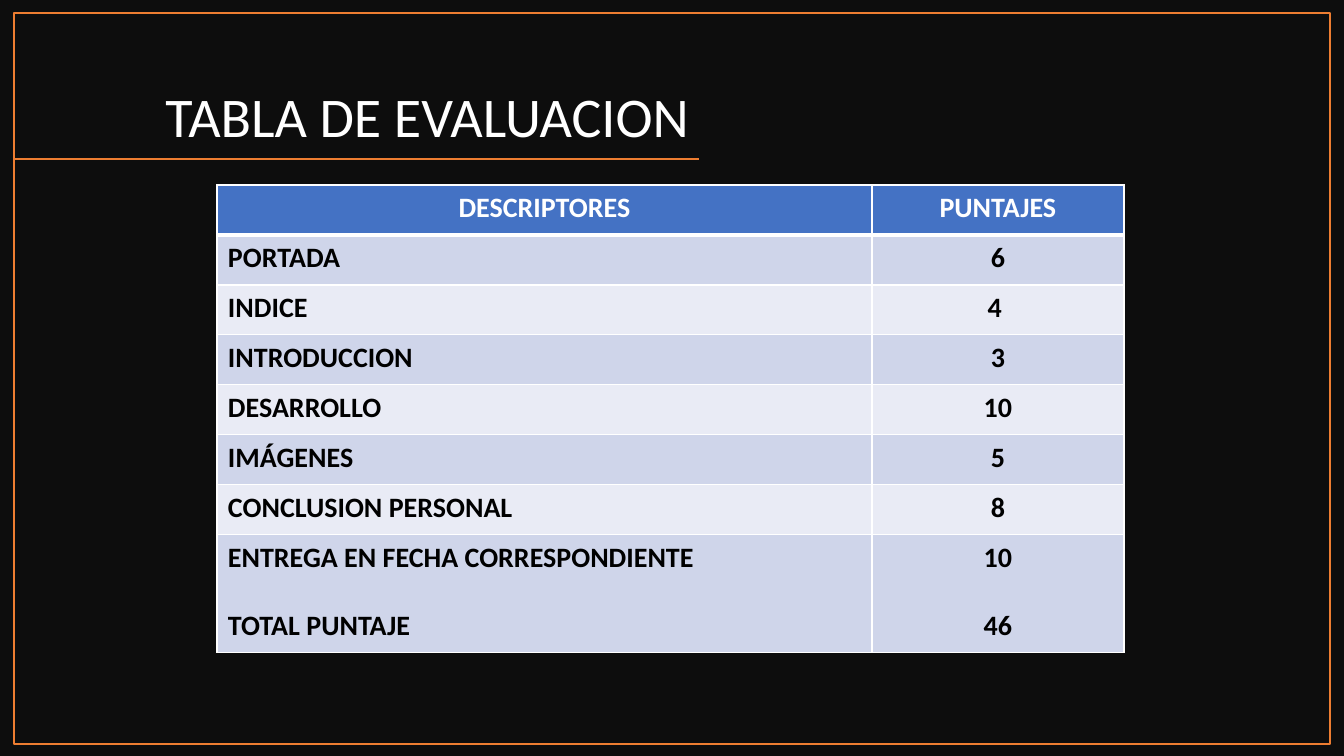
"""Build the evaluation table slide."""
from lxml import etree
from pptx import Presentation
from pptx import util as u
from pptx.dml.color import RGBColor
from pptx.enum import shapes, text
from pptx.oxml.ns import qn

TITLE = "TABLA DE EVALUACION"
HEADINGS = ("DESCRIPTORES", "PUNTAJES")
SCORES = [
    (["PORTADA"], ["6"]),
    (["INDICE"], ["4 "]),
    (["INTRODUCCION"], ["3"]),
    (["DESARROLLO"], ["10"]),
    (["IMÁGENES"], ["5"]),
    (["CONCLUSION PERSONAL"], ["8"]),
    (["ENTREGA EN FECHA CORRESPONDIENTE", "TOTAL PUNTAJE"], ["10", "46"]),
]
FONT = "Calibri"
NIGHT, ORANGE, WHITE, BLACK = "0D0D0D", "ED7D31", "FFFFFF", "000000"
HEADING_BLUE, BANDS = "4472C4", ("CFD5EA", "E9EBF5")
SLIDE = (1344, 756)
TITLE_BOX = (93, 42, 606, 113)
FRAME = (14, 13, 1316, 731)
RULE_Y = 159
TABLE_AT = (217, 185)
COLUMNS = (655, 252)
ROW, LAST_ROW = 50, 118
CELL_INSETS = (11, 6)


def px(length):
    return u.Emu(round(length * 914400 / 100.8))


def color(value):
    return RGBColor.from_string(value)


def write(frame, lines, size, ink, bold=False, align=text.PP_ALIGN.LEFT, gap=0, spacing=1.0):
    for number, line in enumerate(lines):
        paragraph = frame.add_paragraph() if number else frame.paragraphs[0]
        paragraph.alignment = align
        paragraph.line_spacing = spacing
        if number:
            paragraph.space_before = u.Pt(gap)
        run = paragraph.add_run()
        run.text = line
        run.font.name, run.font.size, run.font.bold = FONT, u.Pt(size), bold
        run.font.color.rgb = color(ink)


def outline(line):
    line.color.rgb = color(ORANGE)
    line.width = u.Pt(1)


def border(cell, side, width):
    edge = etree.SubElement(cell._tc.get_or_add_tcPr(), qn(f"a:ln{side}"), w=str(u.Pt(width)))
    fill = etree.SubElement(edge, qn("a:solidFill"))
    etree.SubElement(fill, qn("a:srgbClr"), val=WHITE)


def add_scores(slide):
    rows = [tuple([heading] for heading in HEADINGS)] + SCORES
    heights = [ROW] * len(SCORES) + [LAST_ROW]
    table = slide.shapes.add_table(len(rows), len(COLUMNS), *map(px, TABLE_AT),
                                   px(sum(COLUMNS)), px(sum(heights))).table
    for column, width in zip(table.columns, COLUMNS):
        column.width = px(width)
    for r, (row, height) in enumerate(zip(rows, heights)):
        table.rows[r].height = px(height)
        heading = r == 0
        for c, lines in enumerate(row):
            cell = table.cell(r, c)
            cell.margin_left = cell.margin_right = px(CELL_INSETS[0])
            cell.margin_top = cell.margin_bottom = px(CELL_INSETS[1])
            for side, width in (("L", 1), ("R", 1), ("T", 3 if r == 1 else 1), ("B", 3 if heading else 1)):
                border(cell, side, width)
            cell.fill.solid()
            cell.fill.fore_color.rgb = color(HEADING_BLUE if heading else BANDS[(r - 1) % 2])
            centred = heading or c == 1
            write(cell.text_frame, lines, 20, WHITE if heading else BLACK, bold=True, gap=24,
                  align=text.PP_ALIGN.CENTER if centred else text.PP_ALIGN.LEFT)


def main():
    deck = Presentation()
    deck.slide_width, deck.slide_height = map(px, SLIDE)
    slide = deck.slides.add_slide(deck.slide_layouts[5])
    slide.background.fill.solid()
    slide.background.fill.fore_color.rgb = color(NIGHT)

    title = slide.shapes.title
    title.left, title.top, title.width, title.height = map(px, TITLE_BOX)
    title.text_frame.vertical_anchor = text.MSO_ANCHOR.BOTTOM
    title.text_frame.word_wrap = True
    write(title.text_frame, [TITLE], 40, WHITE, align=text.PP_ALIGN.RIGHT, spacing=0.9)

    rule_end = TITLE_BOX[0] + TITLE_BOX[2]
    rule = slide.shapes.add_connector(shapes.MSO_CONNECTOR.STRAIGHT, px(rule_end), px(RULE_Y),
                                      px(FRAME[0]), px(RULE_Y))
    outline(rule.line)
    etree.SubElement(rule._element.spPr, qn("a:effectLst"))

    frame = slide.shapes.add_shape(shapes.MSO_SHAPE.RECTANGLE, *map(px, FRAME))
    frame.shadow.inherit = False
    frame.fill.background()
    outline(frame.line)

    add_scores(slide)
    deck.save("out.pptx")


if __name__ == "__main__":
    main()
